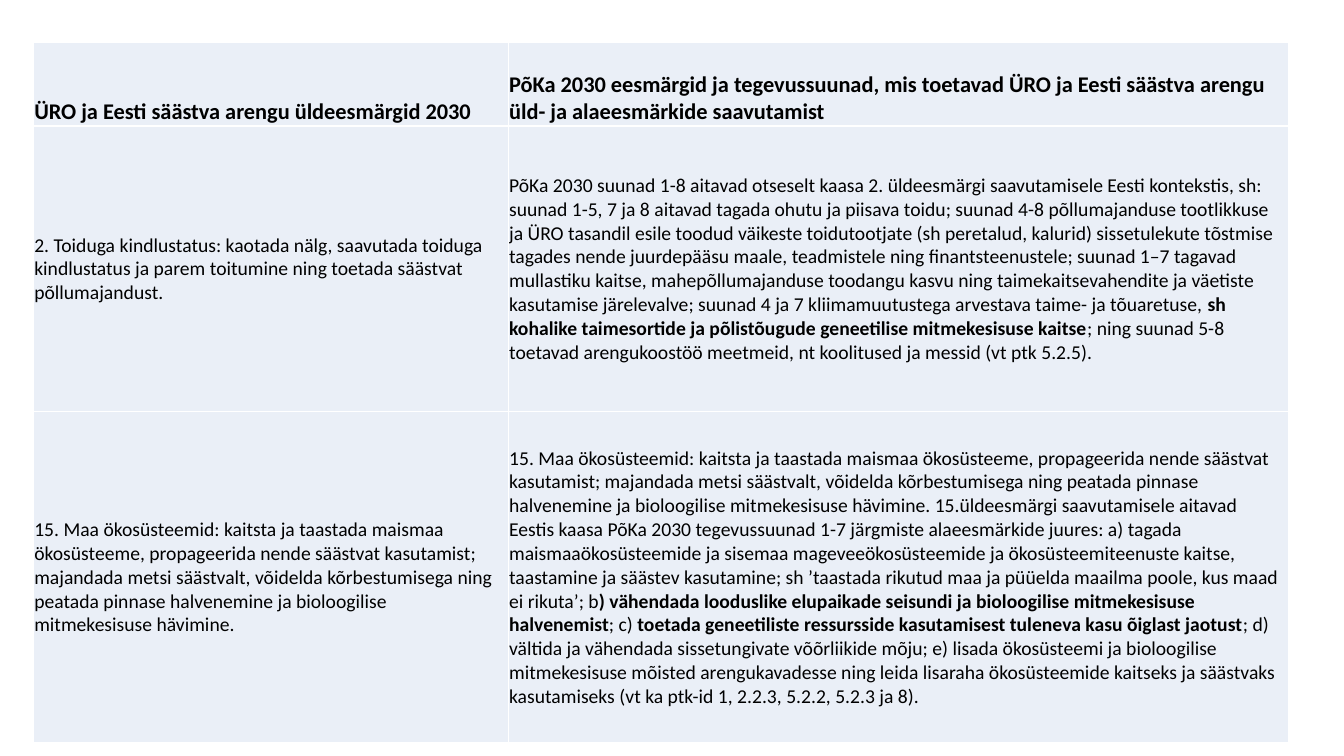
from dataclasses import dataclass

from lxml import etree
from pptx import Presentation
from pptx import util as u
from pptx.dml.color import RGBColor
from pptx.enum import text
from pptx.oxml import ns


@dataclass(frozen=True)
class Theme:
    """Colours, font and type sizes of the slide."""
    font: str = "Calibri"
    ink: str = "000000"
    cell: str = "EAEFF7"
    rule: str = "FFFFFF"
    rule_width: float = 1
    heading_size: float = 16
    body_size: float = 14


THEME = Theme()
TABLE_BOX = (0.33, 0.42, 12.45, 6.95)
COLUMN_WIDTHS = (4.71, 7.74)
ROW_HEIGHTS = (0.83, 2.83, 3.29)

HEADINGS = (
    "ÜRO ja Eesti säästva arengu üldeesmärgid 2030",
    "PõKa 2030 eesmärgid ja tegevussuunad, mis toetavad ÜRO ja Eesti säästva arengu "
    "üld- ja alaeesmärkide saavutamist",
)
FOOD_GOAL = (
    "2. Toiduga kindlustatus: kaotada nälg, saavutada toiduga kindlustatus ja parem "
    "toitumine ning toetada säästvat põllumajandust."
)
LAND_GOAL = (
    "15. Maa ökosüsteemid: kaitsta ja taastada maismaa ökosüsteeme, propageerida nende "
    "säästvat kasutamist; majandada metsi säästvalt, võidelda kõrbestumisega ning peatada "
    "pinnase halvenemine ja bioloogilise mitmekesisuse hävimine."
)
FOOD_ACTIONS = (
    ("PõKa 2030 suunad 1-8 aitavad otseselt kaasa 2. üldeesmärgi saavutamisele Eesti "
     "kontekstis, sh: suunad 1-5, 7 ja 8 aitavad tagada ohutu ja piisava toidu; suunad 4-8 "
     "põllumajanduse tootlikkuse ja ÜRO tasandil esile toodud väikeste toidutootjate (sh "
     "peretalud, kalurid) sissetulekute tõstmise tagades nende juurdepääsu maale, teadmistele "
     "ning finantsteenustele; suunad 1–7 tagavad mullastiku kaitse, mahepõllumajanduse toodangu "
     "kasvu ning taimekaitsevahendite ja väetiste kasutamise järelevalve; suunad 4 ja 7 "
     "kliimamuutustega arvestava taime- ja tõuaretuse, ", False),
    ("sh kohalike taimesortide ja põlistõugude geneetilise mitmekesisuse kaitse", True),
    ("; ning suunad 5-8 toetavad arengukoostöö meetmeid, nt koolitused ja messid "
     "(vt ptk 5.2.5).", False),
)
LAND_ACTIONS = (
    (LAND_GOAL + " 15.üldeesmärgi saavutamisele aitavad Eestis kaasa PõKa 2030 tegevussuunad "
     "1-7 järgmiste alaeesmärkide juures: a) tagada maismaaökosüsteemide ja sisemaa "
     "mageveeökosüsteemide ja ökosüsteemiteenuste kaitse, taastamine ja säästev kasutamine; sh "
     "’taastada rikutud maa ja püüelda maailma poole, kus maad ei rikuta’; b", False),
    (") vähendada looduslike elupaikade seisundi ja bioloogilise mitmekesisuse halvenemist", True),
    ("; c) ", False),
    ("toetada geneetiliste ressursside kasutamisest tuleneva kasu õiglast jaotust", True),
    ("; d) vältida ja vähendada sissetungivate võõrliikide mõju; e) lisada ökosüsteemi ja "
     "bioloogilise mitmekesisuse mõisted arengukavadesse ning leida lisaraha ökosüsteemide "
     "kaitseks ja säästvaks kasutamiseks (vt ka ptk-id 1, 2.2.3, 5.2.2, 5.2.3 ja 8).", False),
)
ROWS = (
    tuple(((heading, True),) for heading in HEADINGS),
    (((FOOD_GOAL, False),), FOOD_ACTIONS),
    (((LAND_GOAL, False),), LAND_ACTIONS),
)


def add_borders(cell):
    """Rule all four sides of a cell."""
    properties = cell._tc.get_or_add_tcPr()
    for position, side in enumerate(("a:lnL", "a:lnR", "a:lnT", "a:lnB")):
        line = etree.Element(ns.qn(side), w=str(u.Pt(THEME.rule_width)))
        fill = etree.SubElement(line, ns.qn("a:solidFill"))
        etree.SubElement(fill, ns.qn("a:srgbClr"), val=THEME.rule)
        properties.insert(position, line)


def fill_cell(cell, spans, size, anchor):
    """Style a cell and write its text run by run."""
    cell.fill.solid()
    cell.fill.fore_color.rgb = RGBColor.from_string(THEME.cell)
    add_borders(cell)
    cell.margin_left = cell.margin_right = cell.margin_top = u.Inches(0.01)
    cell.margin_bottom = 0
    cell.vertical_anchor = anchor
    para = cell.text_frame.paragraphs[0]
    for words, bold in spans:
        span = para.add_run()
        span.text = words
        span.font.name = THEME.font
        span.font.size = u.Pt(size)
        span.font.bold = bold
        span.font.color.rgb = RGBColor.from_string(THEME.ink)


def add_goals_table(page, box):
    """Place the table of goals and supporting actions in the box."""
    frame = page.shapes.add_table(len(ROWS), len(COLUMN_WIDTHS), *map(u.Inches, box))
    table = frame.table
    table.first_row = table.horz_banding = False
    for column, width in zip(table.columns, COLUMN_WIDTHS):
        column.width = u.Inches(width)
    for index, (row, height, contents) in enumerate(zip(table.rows, ROW_HEIGHTS, ROWS)):
        row.height = u.Inches(height)
        size = THEME.body_size if index else THEME.heading_size
        anchor = text.MSO_ANCHOR.MIDDLE if index else text.MSO_ANCHOR.BOTTOM
        for cell, spans in zip(row.cells, contents):
            fill_cell(cell, spans, size, anchor)


def main():
    """Build and save the deck."""
    deck = Presentation()
    deck.slide_width, deck.slide_height = u.Inches(13.33), u.Inches(7.5)
    page = deck.slides.add_slide(deck.slide_layouts[6])
    add_goals_table(page, TABLE_BOX)
    deck.save("out.pptx")


if __name__ == "__main__":
    main()
